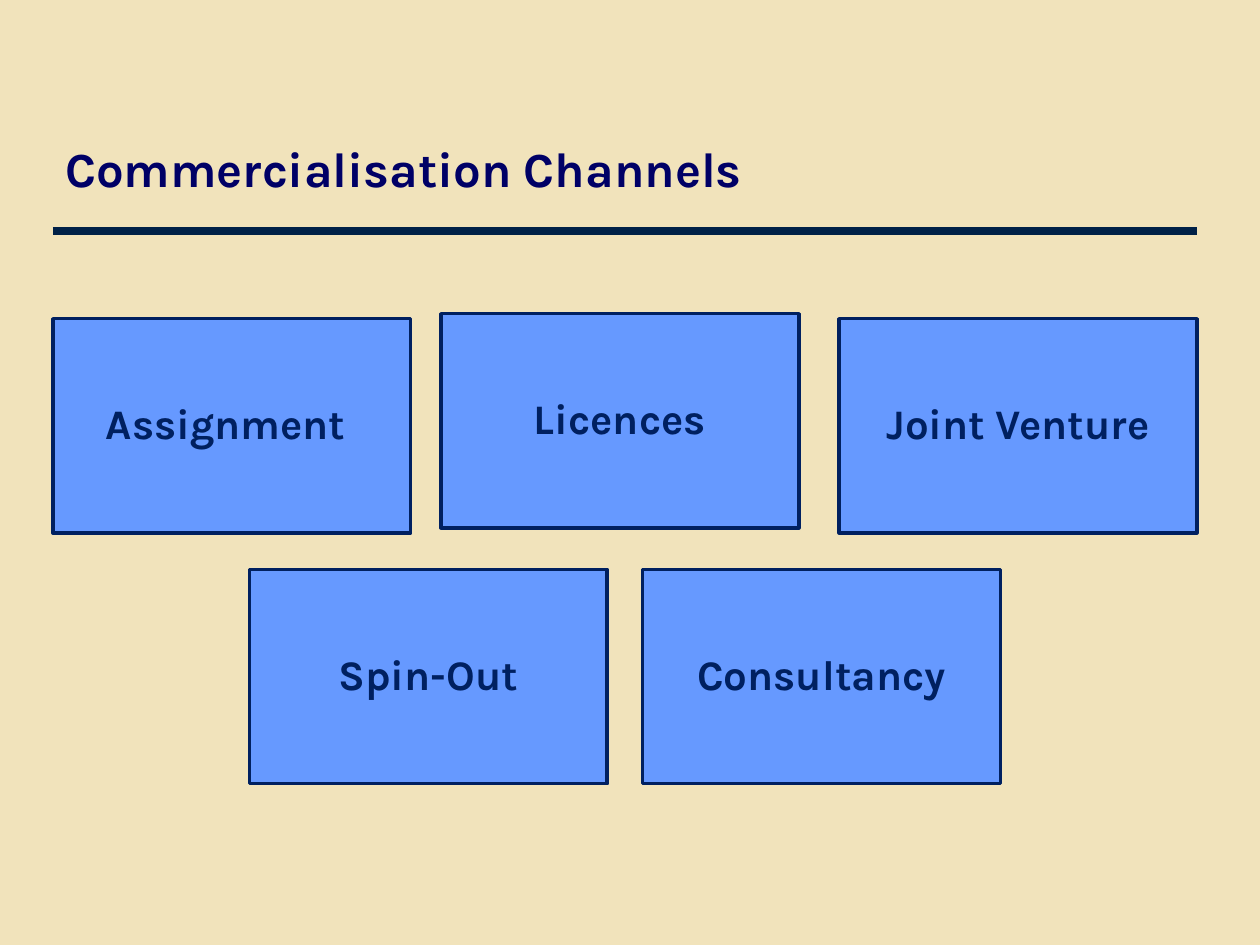
from pptx import Presentation
from pptx.dml.color import RGBColor
from pptx.enum.shapes import MSO_CONNECTOR as Connector, MSO_SHAPE as Shape
from pptx.enum.text import MSO_ANCHOR as Anchor, PP_ALIGN as Align
from pptx.oxml.ns import qn
from pptx.util import Inches, Pt
from lxml.etree import SubElement

CREAM = RGBColor(0xF1, 0xE3, 0xBB)
DARK_BLUE = RGBColor(0x00, 0x21, 0x47)
TITLE_BLUE = RGBColor(0x00, 0x00, 0x66)
NAVY = RGBColor(0x00, 0x20, 0x60)
SKY_BLUE = RGBColor(0x66, 0x99, 0xFF)
WHITE = RGBColor(0xFF, 0xFF, 0xFF)

FONT = "Karla"
LEFT, RIGHT = 0.42, 9.5
BOX_WIDTH, BOX_HEIGHT = 2.84, 1.7
CHANNELS = [
    ("Assignment", LEFT, 2.53),
    ("Licences", 3.5, 2.49),
    ("Joint Venture", RIGHT - BOX_WIDTH, 2.53),
    ("Spin-Out", 1.98, 4.52),
    ("Consultancy", 5.1, 4.52),
]


def add_run(paragraph, text, size, color):
    run = paragraph.add_run()
    run.text = text
    run.font.name = FONT
    run.font.size = Pt(size)
    run.font.bold = True
    run.font.color.rgb = color


def add_title(slide, text):
    box = slide.shapes.add_textbox(Inches(LEFT), Inches(0.92), Inches(7.67), Inches(0.83))
    frame = box.text_frame
    frame.word_wrap = True
    frame.vertical_anchor = Anchor.MIDDLE
    add_run(frame.paragraphs[0], text, 28, TITLE_BLUE)


def add_rule(slide, top):
    rule = slide.shapes.add_connector(
        Connector.STRAIGHT, Inches(LEFT), Inches(top), Inches(RIGHT), Inches(top))
    rule.line.color.rgb = DARK_BLUE
    rule.line.width = Pt(4.5)
    SubElement(rule._element.spPr, qn("a:effectLst"))


def add_channel(slide, text, left, top):
    box = slide.shapes.add_shape(
        Shape.RECTANGLE, Inches(left), Inches(top), Inches(BOX_WIDTH), Inches(BOX_HEIGHT))
    box.shadow.inherit = False
    box.fill.solid()
    box.fill.fore_color.rgb = SKY_BLUE
    box.line.color.rgb = NAVY
    box.line.width = Pt(2)
    frame = box.text_frame
    frame.word_wrap = True
    frame.vertical_anchor = Anchor.MIDDLE
    frame.margin_left = frame.margin_right = Inches(0.1)
    frame.margin_top = frame.margin_bottom = Inches(0.1)
    paragraph = frame.paragraphs[0]
    paragraph.alignment = Align.CENTER
    paragraph.line_spacing = 0.9
    paragraph.space_after = Pt(8.4)
    add_run(paragraph, text, 24, NAVY)
    return paragraph


def main():
    presentation = Presentation()
    presentation.slide_width = Inches(10)
    presentation.slide_height = Inches(7.5)
    slide = presentation.slides.add_slide(presentation.slide_layouts[6])
    slide.background.fill.solid()
    slide.background.fill.fore_color.rgb = CREAM

    add_rule(slide, 1.83)
    add_title(slide, "Commercialisation Channels")
    paragraphs = [add_channel(slide, *channel) for channel in CHANNELS]
    add_run(paragraphs[0], "\t", 20, WHITE)
    presentation.save("out.pptx")


if __name__ == "__main__":
    main()
